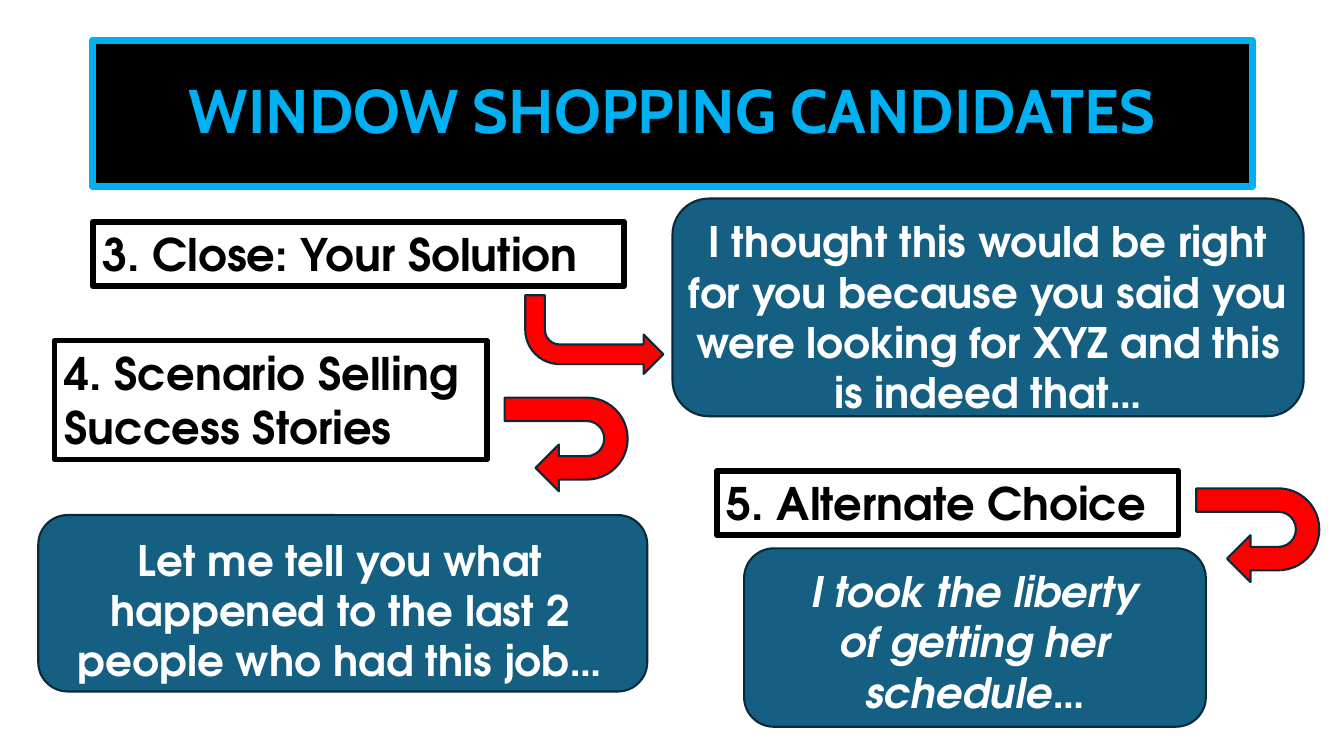
from dataclasses import dataclass

from pptx import Presentation
from pptx.dml.color import RGBColor
from pptx.enum.shapes import MSO_SHAPE
from pptx.enum.text import MSO_ANCHOR, PP_ALIGN
from pptx.shapes.autoshape import Shape
from pptx.util import Inches, Pt

BLACK, WHITE, SKY = "000000", "FFFFFF", "00B0F0"
TEAL, NAVY, RED = "156082", "092A39", "FF0000"
BODY_FONT = "TeX Gyre Adventor"


@dataclass
class Box:
    left: float
    top: float
    width: float
    height: float


@dataclass
class Step:
    text: str
    box: Box


@dataclass
class Quote:
    text: str
    bubble: Box
    text_box: Box
    italic: bool = False


@dataclass
class Arrow:
    kind: MSO_SHAPE
    box: Box
    rotation: float = 0
    flipped: bool = False


STEPS = [
    Step("3. Close: Your Solution", Box(0.92, 2.2, 5.27, 0.64)),
    Step("4. Scenario Selling Success Stories", Box(0.54, 3.38, 4.29, 1.18)),
    Step("5. Alternate Choice", Box(7.11, 4.67, 4.58, 0.64)),
]
QUOTES = [
    Quote("I thought this would be right for you because you said you were "
          "looking for XYZ and this is indeed that…",
          Box(6.67, 1.97, 6.26, 2.16), Box(6.67, 2.09, 6.26, 2.12)),
    Quote("Let me tell you what happened to the last 2 people who had this job…",
          Box(0.38, 5.11, 6.04, 1.75), Box(0.56, 5.25, 5.63, 1.62)),
    Quote("I took the liberty of getting her schedule…",
          Box(7.38, 5.44, 4.58, 1.77), Box(7.86, 5.56, 3.62, 1.62), italic=True),
]
ARROWS = [
    Arrow(MSO_SHAPE.U_TURN_ARROW, Box(5.15, 3.8, 0.93, 1.22), rotation=90),
    Arrow(MSO_SHAPE.U_TURN_ARROW, Box(12.01, 4.7, 0.93, 1.22), rotation=90),
    Arrow(MSO_SHAPE.BENT_ARROW, Box(5.21, 2.93, 1.37, 0.78), flipped=True),
]

deck = Presentation()
deck.slide_width, deck.slide_height = Inches(13.33), Inches(7.5)
slide = deck.slides.add_slide(deck.slide_layouts[6])


def color(value: str) -> RGBColor:
    return RGBColor.from_string(value)


def inches(box: Box) -> list[int]:
    return [Inches(v) for v in (box.left, box.top, box.width, box.height)]


def draw_shape(kind: MSO_SHAPE, box: Box, fill: str | None,
               line: str, line_width: float) -> Shape:
    shape = slide.shapes.add_shape(kind, *inches(box))
    shape.shadow.inherit = False
    if fill:
        shape.fill.solid()
        shape.fill.fore_color.rgb = color(fill)
    else:
        shape.fill.background()
    shape.line.color.rgb = color(line)
    shape.line.width = Pt(line_width)
    return shape


def write(shape: Shape, text: str, ink: str, size: float,
          align: PP_ALIGN = PP_ALIGN.CENTER, anchor: MSO_ANCHOR = MSO_ANCHOR.TOP,
          font: str = BODY_FONT, italic: bool = False,
          line_spacing: float = 1.0) -> None:
    frame = shape.text_frame
    paragraph = frame.paragraphs[0]
    run = paragraph.add_run()
    formats = {
        frame: {"word_wrap": True, "vertical_anchor": anchor},
        paragraph: {"alignment": align, "line_spacing": line_spacing},
        run: {"text": text},
        run.font: {"name": font, "size": Pt(size), "bold": True, "italic": italic},
    }
    for part, values in formats.items():
        for attribute, value in values.items():
            setattr(part, attribute, value)
    run.font.color.rgb = color(ink)


def draw_step(step: Step) -> None:
    label = draw_shape(MSO_SHAPE.RECTANGLE, step.box, None, BLACK, 4)
    write(label, step.text, BLACK, 32, align=PP_ALIGN.LEFT)


def draw_quote(quote: Quote) -> None:
    draw_shape(MSO_SHAPE.ROUNDED_RECTANGLE, quote.bubble, TEAL, NAVY, 1.5)
    words = slide.shapes.add_textbox(*inches(quote.text_box))
    write(words, quote.text, WHITE, 30, italic=quote.italic)


def draw_arrow(arrow: Arrow) -> None:
    pointer = draw_shape(arrow.kind, arrow.box, RED, NAVY, 1.5)
    pointer.rotation = arrow.rotation
    if arrow.flipped:
        pointer._element.spPr.xfrm.set("flipV", "1")


# Title banner
banner = draw_shape(MSO_SHAPE.RECTANGLE, Box(0.92, 0.4, 11.5, 1.45), BLACK, SKY, 5)
write(banner, "WINDOW SHOPPING CANDIDATES", SKY, 44,
      anchor=MSO_ANCHOR.MIDDLE, font="Cabin", line_spacing=0.9)

# Numbered steps, what to say, and the arrows between them
for step in STEPS:
    draw_step(step)
for quote in QUOTES:
    draw_quote(quote)
for arrow in ARROWS:
    draw_arrow(arrow)

deck.save("out.pptx")
